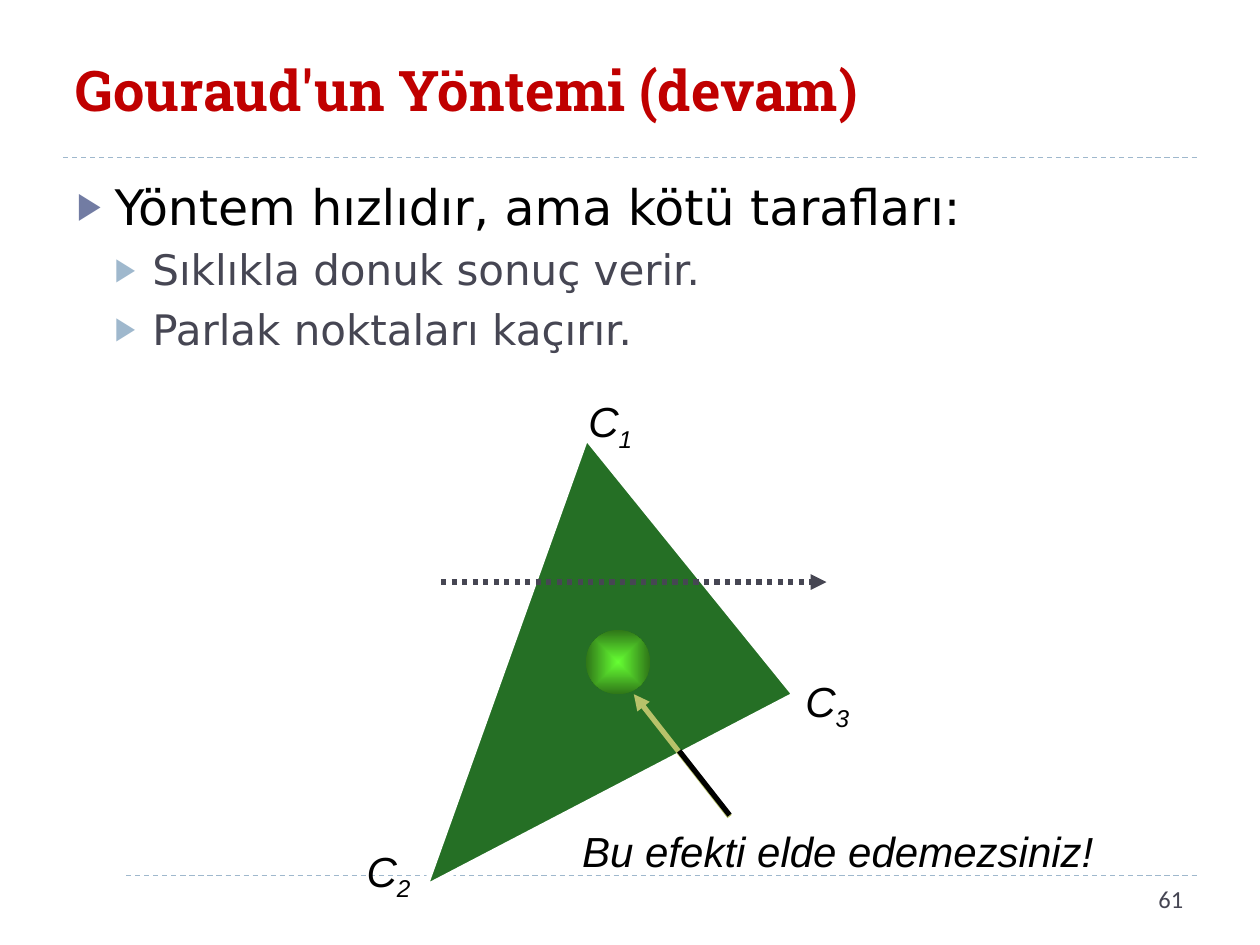
"""Build the slide on the weaknesses of Gouraud shading."""
from lxml import etree
from pptx import Presentation
from pptx.dml.color import RGBColor
from pptx.enum.dml import MSO_LINE
from pptx.enum.shapes import MSO_CONNECTOR, MSO_SHAPE
from pptx.enum.text import MSO_ANCHOR, MSO_AUTO_SIZE, PP_ALIGN
from pptx.oxml.ns import qn
from pptx.util import Pt

STRAIGHT = MSO_CONNECTOR.STRAIGHT
RECTANGLE, OVAL = MSO_SHAPE.RECTANGLE, MSO_SHAPE.OVAL
DASH, DOTS = MSO_LINE.DASH, MSO_LINE.ROUND_DOT
LEFT, CENTER, RIGHT = PP_ALIGN.LEFT, PP_ALIGN.CENTER, PP_ALIGN.RIGHT
MIDDLE, TOP = MSO_ANCHOR.MIDDLE, MSO_ANCHOR.TOP
NO_AUTOSIZE = MSO_AUTO_SIZE.NONE

color = RGBColor.from_string


def style_run(run, size, font, hex_color, bold=False, italic=False):
    run.font.size = Pt(size)
    run.font.name = font
    run.font.color.rgb = color(hex_color)
    run.font.bold = bold
    run.font.italic = italic


def add_line(start, end, hex_color, width, dash=None, arrow=False):
    line = slide.shapes.add_connector(STRAIGHT, *map(Pt, start + end))
    line.line.color.rgb = color(hex_color)
    line.line.width = Pt(width)
    if dash:
        line.line.dash_style = dash
    if arrow:
        etree.SubElement(line.line._get_or_add_ln(), qn("a:tailEnd"), type="triangle")
    etree.SubElement(line._element.spPr, qn("a:effectLst"))


presentation = Presentation()
presentation.slide_width, presentation.slide_height = Pt(720), Pt(540)
slide = presentation.slides.add_slide(presentation.slide_layouts[1])

for y in (500.4, 90):
    add_line((36, y), (684, y), "9FB8CD", 0.75, DASH)

corner = slide.shapes.add_shape(RECTANGLE, Pt(25.2), Pt(491), Pt(45.4), Pt(45.4))
number = slide.shapes.add_shape(RECTANGLE, Pt(515.5), Pt(501.8), Pt(167.8), Pt(28.8))
for panel in (corner, number):
    panel.shadow.inherit = False
    panel.fill.solid()
    panel.fill.fore_color.rgb = color("FFFFFF")
    panel.line.fill.background()
number.text_frame.text = "61"
number.text_frame.vertical_anchor = TOP
number.text_frame.paragraphs[0].alignment = RIGHT
style_run(number.text_frame.paragraphs[0].runs[0], 14, "Calibri", "464653")

title, body = slide.placeholders
title.left, title.top, title.width, title.height = map(Pt, (36, 12.2, 648, 77.8))
title.text_frame.text = "Gouraud'un Yöntemi (devam)"
title.text_frame.auto_size = NO_AUTOSIZE
title.text_frame.vertical_anchor = MIDDLE
title.text_frame.paragraphs[0].alignment = LEFT
style_run(title.text_frame.paragraphs[0].runs[0], 32, "Roboto Slab", "C00000", bold=True)

points = [
    ("Yöntem hızlıdır, ama kötü tarafları:", 0),
    ("Sıklıkla donuk sonuç verir.", 1),
    ("Parlak noktaları kaçırır.", 1),
]
level_styles = [(28, "000000", "727CA3", 6), (24, "464653", "9FB8CD", 5)]
body.left, body.top, body.width, body.height = map(Pt, (36.7, 97.2, 648, 388.8))
body.text_frame.text = "\n".join(text for text, level in points)
body.text_frame.auto_size = NO_AUTOSIZE
for paragraph, (text, level) in zip(body.text_frame.paragraphs, points):
    size, text_color, bullet_color, space = level_styles[level]
    paragraph.level = level
    paragraph.space_before = Pt(space)
    style_run(paragraph.runs[0], size, "DejaVu Sans", text_color)
    properties = paragraph._p.get_or_add_pPr()
    properties.set("marL", str(Pt(21.6 * (level + 1))))
    properties.set("indent", str(Pt(-21.6)))
    bullet = etree.SubElement(properties, qn("a:buClr"))
    etree.SubElement(bullet, qn("a:srgbClr"), val=bullet_color)
    etree.SubElement(properties, qn("a:buSzPct"), val="76000")
    etree.SubElement(properties, qn("a:buChar"), char="▶")

builder = slide.shapes.build_freeform(243.4, 506.9, scale=Pt(1))
builder.add_line_segments([(334.8, 249.8), (454.3, 396.7)], close=True)
triangle = builder.convert_to_shape()
triangle.shadow.inherit = False
triangle.fill.solid()
triangle.fill.fore_color.rgb = color("256F25")
triangle.line.color.rgb = color("FFFFFF")
triangle.line.width = Pt(3)

labels = [
    ("Bu efekti elde edemezsiniz!", "", 324, 468, 309.6, 36),
    ("C", "1", 317.5, 222.5, 62.6, 55.4),
    ("C", "2", 190.8, 479.5, 62.6, 55.4),
    ("C", "3", 441.4, 382.3, 62.6, 55.4),
]
for text, subscript, *box in labels:
    label = slide.shapes.add_textbox(*map(Pt, box))
    label.text_frame.word_wrap = False
    paragraph = label.text_frame.paragraphs[0]
    paragraph.alignment = CENTER
    paragraph.text = text
    if subscript:
        run = paragraph.add_run()
        run.text = subscript
        run.font._element.set("baseline", "-25000")
    for run in paragraph.runs:
        style_run(run, 24, "Arial", "000000", italic=True)

add_line((252, 332.6), (472.3, 332.6), "464653", 3, DOTS, arrow=True)

highlight = slide.shapes.add_shape(OVAL, Pt(334.8), Pt(360), Pt(36.7), Pt(36.7))
highlight.shadow.inherit = False
highlight.line.fill.background()
highlight.fill.gradient()
for stop, hex_color in zip(highlight.fill.gradient_stops, ("66FF33", "2F7618")):
    stop.color.rgb = color(hex_color)
gradient = highlight._element.spPr.find(qn("a:gradFill"))
gradient.remove(gradient.find(qn("a:lin")))
gradient_shape = etree.SubElement(gradient, qn("a:path"))
gradient_shape.set("path", "shape")
etree.SubElement(gradient_shape, qn("a:fillToRect"), l="50000", t="50000", r="50000", b="50000")

add_line((416.9, 466.6), (362.2, 396.7), "B8C26A", 3, arrow=True)
add_line((416.9, 465.8), (388.1, 429.1), "000000", 3)

presentation.save("out.pptx")
